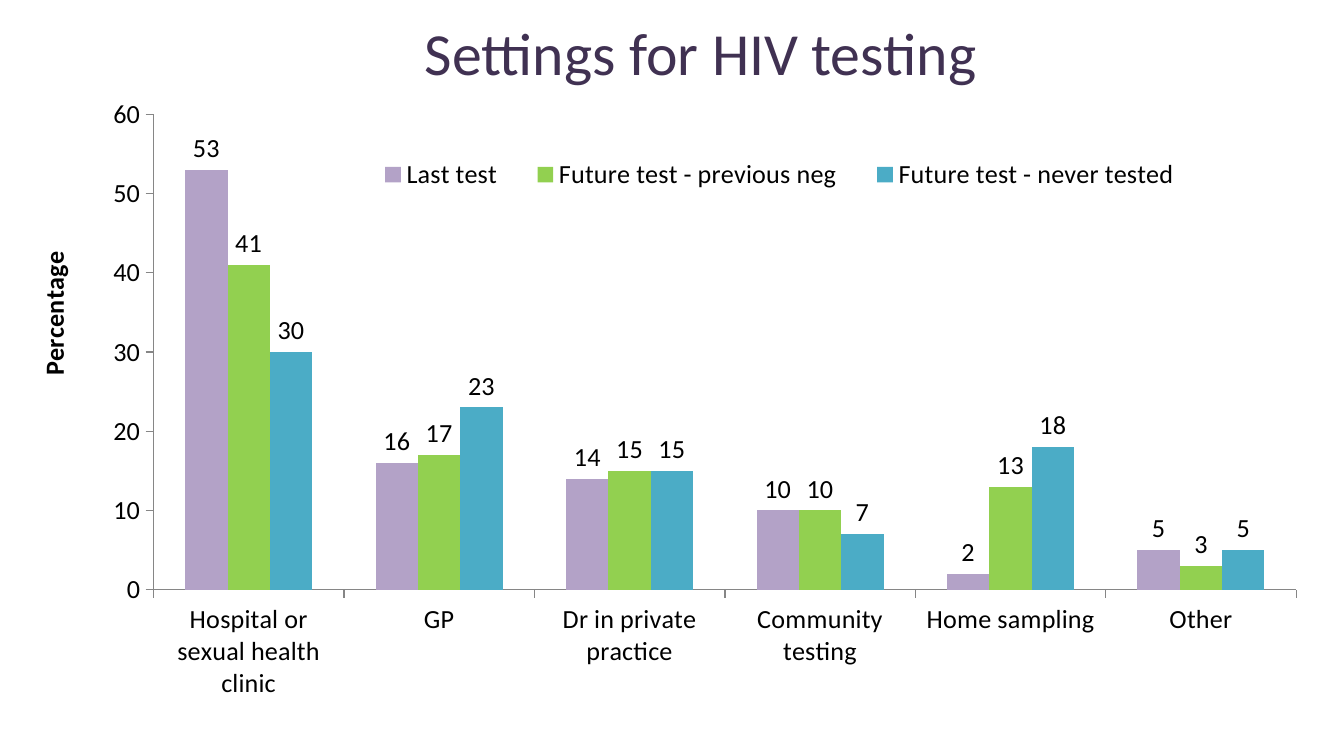
from lxml import etree
from pptx import Presentation
from pptx.chart.data import CategoryChartData
from pptx.dml.color import RGBColor
from pptx.enum.chart import XL_CHART_TYPE as CT, XL_LABEL_POSITION as LP
from pptx.enum.chart import XL_LEGEND_POSITION as LG, XL_TICK_MARK as TM
from pptx.enum.text import MSO_ANCHOR, PP_ALIGN
from pptx.oxml.ns import qn
from pptx.util import Pt

PX = 914400 / 134.4
FONT = "Calibri"


def rgb(value):
    return RGBColor.from_string(value)


def place(parent, index, **values):
    for old in parent.findall(qn("c:layout")):
        parent.remove(old)
    layout = etree.Element(qn("c:layout"))
    manual = etree.SubElement(layout, qn("c:manualLayout"))
    for tag, value in values.items():
        etree.SubElement(manual, qn("c:" + tag)).set("val", str(value))
    parent.insert(index, layout)


prs = Presentation()
prs.slide_width, prs.slide_height = round(1344 * PX), round(756 * PX)
s = prs.slides.add_slide(prs.slide_layouts[6])

box = [round(v * PX) for v in (58, 0, 1286, 103)]
tf = s.shapes.add_textbox(*box).text_frame
tf.word_wrap = True
tf.vertical_anchor = MSO_ANCHOR.MIDDLE
p = tf.paragraphs[0]
p.text = "Settings for HIV testing"
p.alignment = PP_ALIGN.CENTER
r = p.runs[0]
r.font.name = FONT
r.font.size = Pt(32)
r.font.color.rgb = rgb("403152")

series = [
    ("Last test", (53, 16, 14, 10, 2, 5), "B3A2C7"),
    ("Future test - previous neg", (41, 17, 15, 10, 13, 3), "92D050"),
    ("Future test - never tested", (30, 23, 15, 7, 18, 5), "4BACC6"),
]
data = CategoryChartData(number_format="0")
data.categories = [
    "Hospital or sexual health clinic", "GP", "Dr in private practice",
    "Community testing", "Home sampling", "Other",
]
for name, values, color in series:
    data.add_series(name, values)

box = [round(v * PX) for v in (5, 50, 1292, 656)]
chart = s.shapes.add_chart(CT.COLUMN_CLUSTERED, *box, data).chart
chart.has_title = False
chart.font.name = FONT
chart.font.size = Pt(14)
chart.font.color.rgb = rgb("000000")

plot = chart.plots[0]
plot.gap_width = 150
plot.overlap = 0
plot.vary_by_categories = False
plot.has_data_labels = True
plot.data_labels.show_value = True
plot.data_labels.position = LP.OUTSIDE_END
for ser, (name, values, color) in zip(plot.series, series):
    ser.format.fill.solid()
    ser.format.fill.fore_color.rgb = rgb(color)

for axis in (chart.category_axis, chart.value_axis):
    axis.has_major_gridlines = False
    axis.major_tick_mark = TM.OUTSIDE
    axis.minor_tick_mark = TM.NONE
    axis.format.line.color.rgb = rgb("868686")
    axis.format.line.width = Pt(0.75)

axis = chart.value_axis
axis.minimum_scale, axis.maximum_scale, axis.major_unit = 0, 60, 10
tf = axis.axis_title.text_frame
tf.text = "Percentage"
font = tf.paragraphs[0].runs[0].font
font.name = FONT
font.size = Pt(14)
font.bold = True
font.color.rgb = rgb("000000")

chart.has_legend = True
chart.legend.position = LG.TOP
chart.legend.include_in_layout = False

plot_area = chart.category_axis._element.getparent()
place(plot_area, 0, layoutTarget="inner", xMode="edge", yMode="edge",
      x=0.115, y=0.098, w=0.885, h=0.725)
place(axis.axis_title._element, 1, xMode="edge", yMode="edge", x=0.02, y=0.3)
place(chart.legend._element, 1, xMode="edge", yMode="edge",
      x=0.27, y=0.16, w=0.66, h=0.06)

prs.save("out.pptx")
